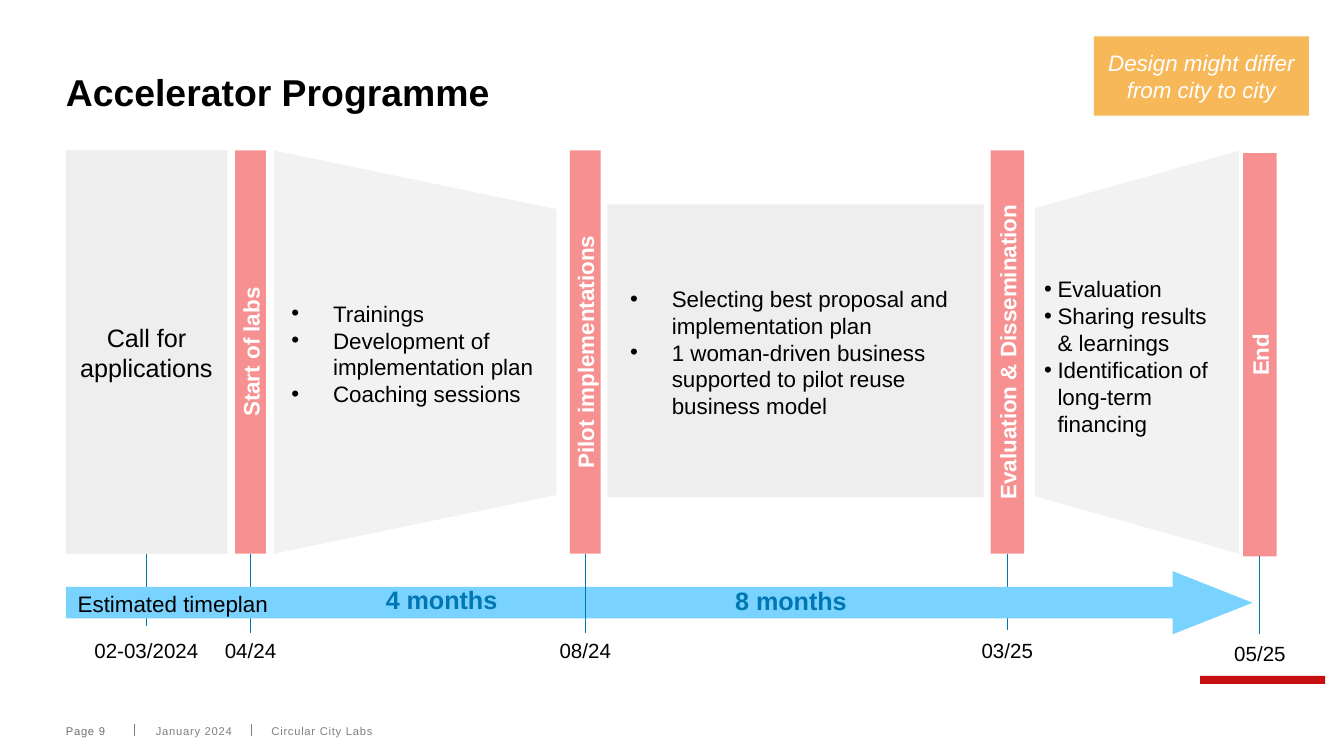
from pptx import Presentation
from pptx.dml.color import RGBColor
from pptx.enum.shapes import MSO_CONNECTOR, MSO_SHAPE
from pptx.enum.text import MSO_ANCHOR, PP_ALIGN
from pptx.oxml.ns import qn
from pptx.util import Inches, Pt
from lxml.etree import SubElement

BLACK = RGBColor(0x00, 0x00, 0x00)
WHITE = RGBColor(0xFF, 0xFF, 0xFF)
GREY = RGBColor(0x80, 0x80, 0x80)
DARK_GREY = RGBColor(0x6F, 0x6F, 0x6F)
PANEL = RGBColor(0xEE, 0xEE, 0xEE)
FUNNEL = RGBColor(0xF2, 0xF2, 0xF2)
PINK = RGBColor(0xF7, 0x91, 0x91)
RED = RGBColor(0xC8, 0x0F, 0x0F)
ORANGE = RGBColor(0xF6, 0xB8, 0x59)
SKY = RGBColor(0x7A, 0xD3, 0xFF)
BLUE = RGBColor(0x00, 0x77, 0xB2)

BAR_HEIGHT = 3
DATE_OFFSET = 3.58  # from the top of a bar to the top of its date

# label, left, top, width, end of line, date, width of date box
EARLY_MILESTONES = [
    ("Start of labs", 1.75, 1.12, 0.23, 4.71, "04/24", 1.47),
    ("Evaluation & Dissemination", 7.37, 1.12, 0.25, 4.69, "03/25", 1.05),
]
LATE_MILESTONES = [
    ("End", 9.25, 1.14, 0.25, 4.72, "05/25", 1.05),
    ("Pilot implementations", 4.24, 1.12, 0.23, 4.71, "08/24", 1.47),
]

# left, top, width, height, bullet indent, lines
BULLET_LISTS = [
    (2.07, 1.14, 2.1, 2.98, 0.31, [
        "Trainings", "Development of implementation plan", "Coaching sessions"]),
    (4.59, 1.12, 2.65, 3, 0.31, [
        "Selecting best proposal and implementation plan",
        "1 woman-driven business supported to pilot reuse business model"]),
    (7.67, 1.15, 1.55, 3, 0.1, [
        "Evaluation", "Sharing results & learnings",
        "Identification of long-term financing"]),
]

# text, left, width, colour
FOOTERS = [
    ("January 2024", 1.16, 0.58, GREY),
    ("Circular City Labs", 2.02, 6.32, GREY),
    ("Page 9", 0.49, 0.49, DARK_GREY),
]


def add_bullet(para, indent):
    properties = para._p.get_or_add_pPr()
    properties.set("marL", str(Inches(indent)))
    properties.set("indent", str(-Inches(indent)))
    SubElement(properties, qn("a:buFont")).set("typeface", "Arial")
    SubElement(properties, qn("a:buChar")).set("char", "•")


def write(shape, lines, size, color, align=PP_ALIGN.CENTER,
          anchor=MSO_ANCHOR.MIDDLE, indent=None, spacing=None, **style):
    frame = shape.text_frame
    frame.word_wrap = True
    frame.vertical_anchor = anchor
    font_format = {"name": "Arial", "size": Pt(size), **style}
    for index, line in enumerate(lines):
        para = frame.add_paragraph() if index else frame.paragraphs[0]
        para.alignment = align
        if indent:
            add_bullet(para, indent)
        span = para.add_run()
        span.text = line
        for name, value in font_format.items():
            setattr(span.font, name, value)
        span.font.color.rgb = color
        if spacing:
            span.font._element.set("spc", str(int(spacing * 100)))


def set_insets(shape, left=0, top=0, right=0, bottom=0):
    insets = {"left": left, "top": top, "right": right, "bottom": bottom}
    for side, value in insets.items():
        setattr(shape.text_frame, f"margin_{side}", Inches(value))


def add_text(page, area, lines, size, color, **options):
    box = page.shapes.add_textbox(*map(Inches, area))
    write(box, lines, size, color, **options)
    return box


def add_block(page, area, fill, kind=MSO_SHAPE.RECTANGLE, adjustments=(), rotation=0):
    block = page.shapes.add_shape(kind, *map(Inches, area))
    block.shadow.inherit = False
    block.fill.solid()
    block.fill.fore_color.rgb = fill
    block.line.fill.background()
    block.rotation = rotation
    for index, value in enumerate(adjustments):
        block.adjustments[index] = value
    return block


def add_line(page, x, top, bottom, color, width, start=None):
    line = page.shapes.add_connector(
        MSO_CONNECTOR.STRAIGHT, Inches(x), Inches(top), Inches(x), Inches(bottom))
    line.line.color.rgb = color
    line.line.width = Pt(width)
    SubElement(line._element.spPr, qn("a:effectLst"))
    if start is not None:
        line.begin_connect(start, 2)


def add_milestone(page, label, left, top, width, line_end, date, date_width):
    center = left + width / 2
    bar = add_block(page, (left, top, width, BAR_HEIGHT), PINK)
    write(bar, [label], 12, WHITE, bold=True)
    bar.text_frame._txBody.bodyPr.set("vert", "vert270")
    add_line(page, center, top + BAR_HEIGHT, line_end, BLUE, 0.5, bar)
    add_text(page, (center - date_width / 2, top + DATE_OFFSET, date_width, 0.28),
             [date], 11, BLACK)


def add_footer(page):
    add_block(page, (8.93, 5.03, 0.93, 0.06), RED)
    for x in (1, 1.87):
        add_line(page, x, 5.39, 5.48, GREY, 0.75)
    for text, left, width, color in FOOTERS:
        box = add_text(page, (left, 5.39, width, 0.1), [text], 6, color,
                       align=PP_ALIGN.LEFT, spacing=0.4)
        set_insets(box)


def main():
    deck = Presentation()
    deck.slide_width = Inches(10)
    deck.slide_height = deck.slide_width * 9 // 16
    page = deck.slides.add_slide(deck.slide_layouts[6])

    add_footer(page)

    # Phase backgrounds
    add_block(page, (4.52, 1.52, 2.8, 2.18), PANEL)
    add_block(page, (6.96, 1.86, 3, 1.52), FUNNEL, MSO_SHAPE.TRAPEZOID, [0.282], 270)
    add_block(page, (1.59, 1.57, 3, 2.1), FUNNEL, MSO_SHAPE.TRAPEZOID, [0.208], 90)

    # Title
    title = add_text(page, (0.49, 0.26, 9.37, 0.59), ["Accelerator Programme"], 20,
                     BLACK, align=PP_ALIGN.LEFT, anchor=MSO_ANCHOR.BOTTOM, bold=True)
    set_insets(title, right=0.08)
    title.text_frame.paragraphs[0].line_spacing = 0.9

    # Call for applications
    call = add_block(page, (0.49, 1.12, 1.2, BAR_HEIGHT), PANEL)
    write(call, ["Call for applications"], 13.5, BLACK)
    add_line(page, 1.09, 4.12, 4.66, BLUE, 0.5, call)
    add_text(page, (0.47, 4.66, 1.24, 0.36), ["02-03/2024"], 11, BLACK)

    # Milestones whose lines run behind the arrow, and phase contents
    for milestone in EARLY_MILESTONES:
        add_milestone(page, *milestone)
    for *area, indent, lines in BULLET_LISTS:
        add_text(page, area, lines, 12, BLACK, align=PP_ALIGN.LEFT, indent=indent)

    # Time arrow
    add_block(page, (0.49, 4.25, 8.83, 0.47), SKY, MSO_SHAPE.RIGHT_ARROW, [0.5, 1.266])
    for text, left, top in (("4 months", 2.69, 4.3), ("8 months", 5.29, 4.31)):
        add_text(page, (left, top, 1.19, 0.43), [text], 13.5, BLUE,
                 anchor=MSO_ANCHOR.TOP, bold=True)
    add_text(page, (0.48, 4.31, 2.13, 0.36), ["Estimated timeplan"], 12, BLACK,
             align=PP_ALIGN.LEFT)

    # Milestones whose lines cross the arrow
    for milestone in LATE_MILESTONES:
        add_milestone(page, *milestone)

    # Note
    note = add_block(page, (8.14, 0.27, 1.6, 0.59), ORANGE)
    write(note, ["Design might differ from city to city"], 12, WHITE, italic=True)

    deck.save("out.pptx")


if __name__ == "__main__":
    main()
